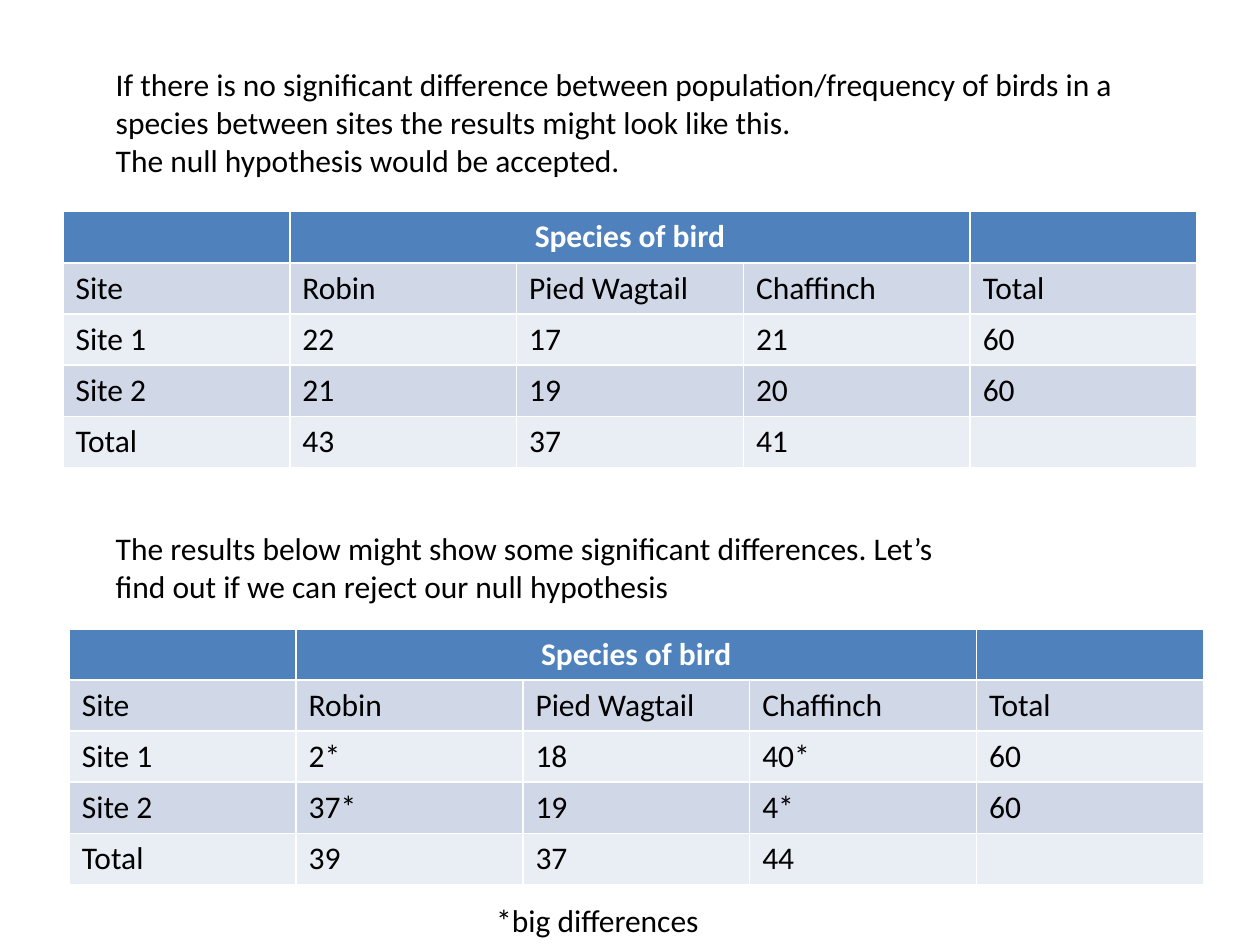
from pptx import Presentation
from pptx.dml.color import RGBColor
from pptx.enum.text import MSO_AUTO_SIZE, PP_ALIGN
from pptx.util import Inches, Pt

CENTER = PP_ALIGN.CENTER
GROW = MSO_AUTO_SIZE.SHAPE_TO_FIT_TEXT
BLANK_LAYOUT = 6
GRID_COLUMNS, GRID_ROWS = 100, 75
COLORS = {
    "header": "4F81BD",
    "dark_band": "D0D8E8",
    "light_band": "E9EDF4",
    "text": "000000",
    "header_text": "FFFFFF",
}
HEADER = ["", "Species of bird", "", "", ""]
SUBHEADER = ["Site", "Robin", "Pied Wagtail", "Chaffinch", "Total"]
SIMILAR_COUNTS = [
    ["Site 1", "22", "17", "21", "60"],
    ["Site 2", "21", "19", "20", "60"],
    ["Total", "43", "37", "41", ""],
]
DIFFERENT_COUNTS = [
    ["Site 1", "2*", "18", "40*", "60"],
    ["Site 2", "37*", "19", "4*", "60"],
    ["Total", "39", "37", "44", ""],
]


class SlideBuilder:
    font_name = "Calibri"
    font_size = Pt(18)

    def __init__(self, presentation):
        self.column = presentation.slide_width / GRID_COLUMNS
        self.row = presentation.slide_height / GRID_ROWS
        layout = presentation.slide_layouts[BLANK_LAYOUT]
        self.slide = presentation.slides.add_slide(layout)

    def area(self, left, top, width, height):
        return (round(left * self.column), round(top * self.row),
                round(width * self.column), round(height * self.row))

    def format_text(self, text_frame, color, bold=False):
        for paragraph in text_frame.paragraphs:
            for run in paragraph.runs:
                run.font.name = self.font_name
                run.font.size = self.font_size
                run.font.bold = bold
                run.font.color.rgb = RGBColor.from_string(COLORS[color])

    def text(self, text, left, top, width, height, wrap=True):
        shape = self.slide.shapes.add_textbox(*self.area(left, top, width, height))
        text_frame = shape.text_frame
        text_frame.word_wrap = wrap
        text_frame.auto_size = GROW
        text_frame.text = text
        self.format_text(text_frame, "text")

    def bird_table(self, counts, left, top, width=90, height=20.3):
        rows = [HEADER, SUBHEADER, *counts]
        table = self.slide.shapes.add_table(
            len(rows), len(HEADER), *self.area(left, top, width, height)).table
        table.cell(0, 1).merge(table.cell(0, 3))
        for row_index, values in enumerate(rows):
            is_header = row_index == 0
            band = "dark_band" if row_index % 2 else "light_band"
            fill = "header" if is_header else band
            for column_index, value in enumerate(values):
                cell = table.cell(row_index, column_index)
                cell.fill.solid()
                cell.fill.fore_color.rgb = RGBColor.from_string(COLORS[fill])
                if value:
                    cell.text_frame.text = value
                    self.format_text(cell.text_frame,
                                     "header_text" if is_header else "text", is_header)
        table.cell(0, 1).text_frame.paragraphs[0].alignment = CENTER


def main():
    presentation = Presentation()
    presentation.slide_width = Inches(10)
    presentation.slide_height = Inches(7.5)
    builder = SlideBuilder(presentation)
    builder.bird_table(SIMILAR_COUNTS, 5, 16.8)
    builder.text(
        "If there is no significant difference between population/frequency of birds "
        "in a species between sites the results might look like this.\n"
        "The null hypothesis would be accepted.", 8.2, 4.7, 83.5, 13.1)
    builder.bird_table(DIFFERENT_COUNTS, 5.5, 49.9)
    builder.text(
        "The results below might show some significant differences. Let’s find out "
        "if we can reject our null hypothesis", 8.2, 41.5, 70.8, 7.1)
    builder.text("*big differences", 38.4, 71, 21.4, 4, wrap=False)
    presentation.save("out.pptx")


if __name__ == "__main__":
    main()
